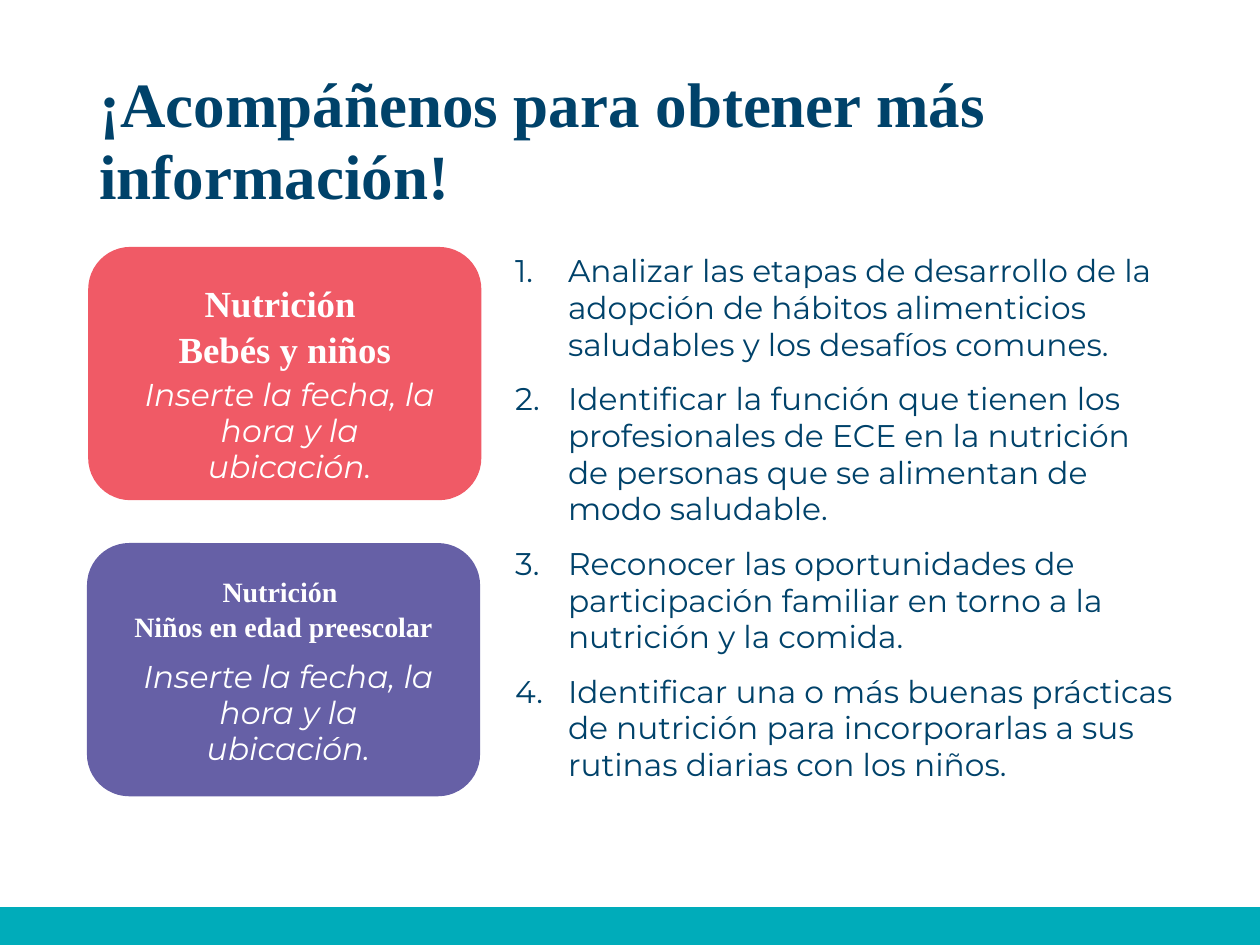
"""Build a slide inviting families to two nutrition sessions."""
from lxml import etree
from pptx import Presentation
from pptx.dml.color import RGBColor
from pptx.enum.shapes import MSO_SHAPE
from pptx.enum.text import MSO_ANCHOR, PP_ALIGN
from pptx.oxml.ns import qn
from pptx.util import Inches, Pt

RECTANGLE = MSO_SHAPE.RECTANGLE
ROUNDED = MSO_SHAPE.ROUNDED_RECTANGLE
CENTER, LEFT = PP_ALIGN.CENTER, PP_ALIGN.LEFT
MIDDLE, TOP = MSO_ANCHOR.MIDDLE, MSO_ANCHOR.TOP

THEME = {
    "navy": RGBColor.from_string("00426A"),
    "teal": RGBColor.from_string("00ACBA"),
    "coral": RGBColor.from_string("F05A66"),
    "purple": RGBColor.from_string("6660A6"),
    "white": RGBColor.from_string("FFFFFF"),
    "serif": "Times New Roman",
    "sans": "Montserrat",
    "title": Pt(36),
    "body": Pt(17.9),
    "detail": Pt(18),
    "large_heading": Pt(21),
    "small_heading": Pt(16),
}
TITLE_FONT = {"name": THEME["serif"], "size": THEME["title"], "bold": True}
BODY_FONT = {"name": THEME["sans"], "size": THEME["body"]}
HEADING_FONT = {"name": THEME["serif"], "bold": True}
DETAIL_FONT = {"name": THEME["sans"], "size": THEME["detail"], "italic": True}

GOALS = [
    "Analizar las etapas de desarrollo de la adopción de hábitos alimenticios saludables y los desafíos comunes.",
    "Identificar la función que tienen los profesionales de ECE en la nutrición de personas que se alimentan de modo saludable.",
    "Reconocer las oportunidades de participación familiar en torno a la nutrición y la comida.",
    "Identificar una o más buenas prácticas de nutrición para incorporarlas a sus rutinas diarias con los niños.",
]
SESSION_DETAIL = "Inserte la fecha, la hora y la ubicación."
SESSIONS = [
    ("Bebés y niños", "coral", "large_heading", 0.7, 1.96, 0.2, 0.81, 1.0),
    ("Niños en edad preescolar", "purple", "small_heading", 0.69, 4.31, 0.19, 0.64, 0.89),
]

presentation = Presentation()
presentation.slide_width = Inches(10)
presentation.slide_height = Inches(7.5)
slide = presentation.slides.add_slide(presentation.slide_layouts[6])


def add_panel(kind, box, color):
    shape = slide.shapes.add_shape(kind, *map(Inches, box))
    shape.shadow.inherit = False
    shape.fill.solid()
    shape.fill.fore_color.rgb = THEME[color]
    shape.line.fill.background()


def add_text(box, lines, font, color, alignment=LEFT, spacing=1.0, anchor=TOP,
             insets=(0.1, 0.05), numbered=False):
    frame = slide.shapes.add_textbox(*map(Inches, box)).text_frame
    horizontal, vertical = map(Inches, insets)
    frame_format = {
        "word_wrap": True, "vertical_anchor": anchor,
        "margin_left": horizontal, "margin_right": horizontal,
        "margin_top": vertical, "margin_bottom": vertical,
    }
    for name, value in frame_format.items():
        setattr(frame, name, value)
    for index, line in enumerate(lines):
        paragraph = frame.paragraphs[0] if index == 0 else frame.add_paragraph()
        paragraph.alignment = alignment
        paragraph.line_spacing = spacing
        if numbered:
            paragraph.space_before = Pt(10 if index else 0)
            properties = paragraph._p.get_or_add_pPr()
            properties.set("marL", str(Inches(0.42)))
            properties.set("indent", str(-Inches(0.42)))
            etree.SubElement(properties, qn("a:buFont"), typeface=THEME["sans"])
            etree.SubElement(properties, qn("a:buAutoNum"), type="arabicPeriod")
        run = paragraph.add_run()
        run.text = line
        for name, value in font.items():
            setattr(run.font, name, value)
        run.font.color.rgb = THEME[color]


add_panel(RECTANGLE, (0, 7.2, 10, 0.3), "teal")
add_text((0.69, 0.4, 9.16, 1.45), ["¡Acompáñenos para obtener más información!"],
         TITLE_FONT, "navy", spacing=0.95, anchor=MIDDLE)
add_text((3.99, 1.96, 5.44, 4.88), GOALS, BODY_FONT, "navy", spacing=0.98, numbered=True)

for audience, color, size, left, top, heading_offset, heading_height, detail_offset in SESSIONS:
    add_panel(ROUNDED, (left, top, 3.12, 2.01), color)
    add_text((left + 0.14, top + heading_offset, 2.84, heading_height),
             ["Nutrición ", audience], {**HEADING_FONT, "size": THEME[size]},
             "white", CENTER, spacing=1.05)
    add_text((left + 0.37, top + detail_offset, 2.46, 1.06), [SESSION_DETAIL],
             DETAIL_FONT, "white", CENTER, spacing=0.95, insets=(0.07, 0.04))

presentation.save("out.pptx")
